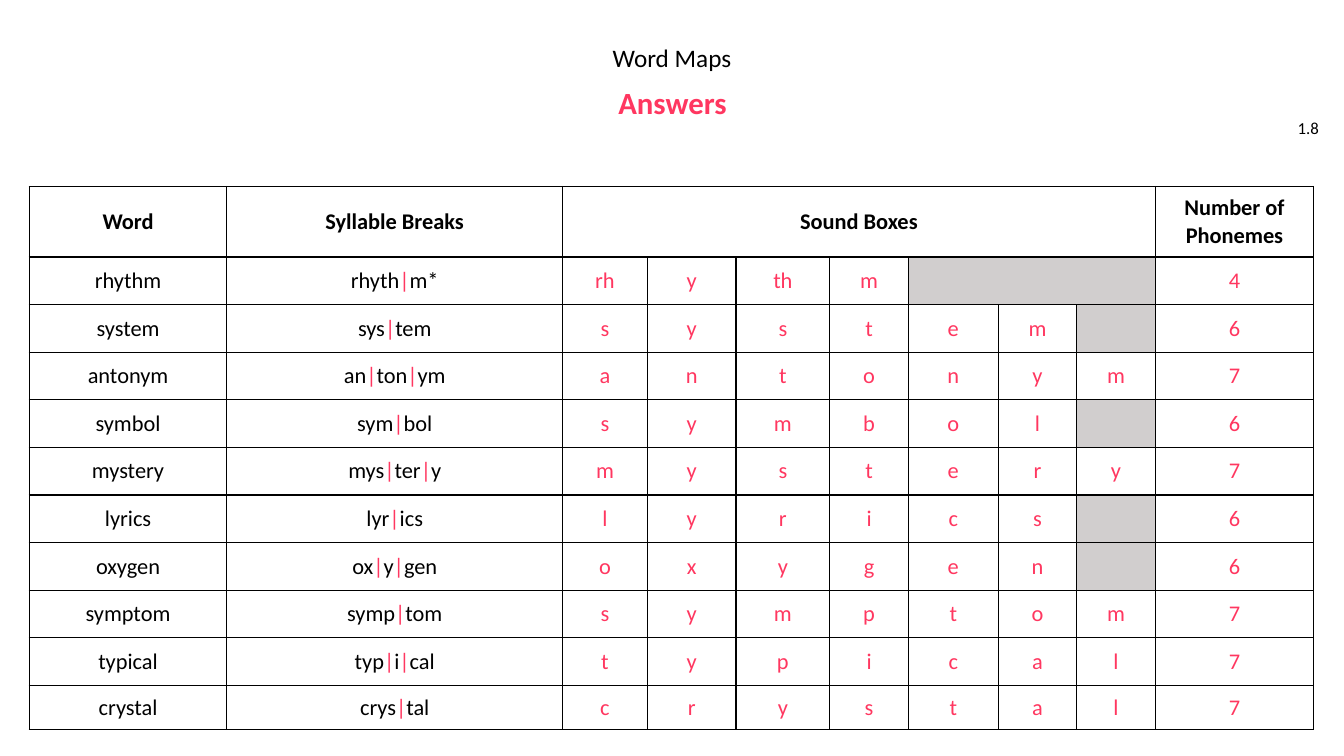
"""Build the Word Maps answer slide."""
from dataclasses import dataclass

from lxml import etree
from pptx import Presentation
from pptx.dml.color import RGBColor
from pptx.enum.text import MSO_ANCHOR, MSO_AUTO_SIZE, PP_ALIGN
from pptx.oxml.ns import qn
from pptx.util import Inches, Pt

MIDDLE, TOP = MSO_ANCHOR.MIDDLE, MSO_ANCHOR.TOP
CENTER, RIGHT = PP_ALIGN.CENTER, PP_ALIGN.RIGHT
NO_FIT = MSO_AUTO_SIZE.NONE


@dataclass(frozen=True)
class Theme:
    font: str = "Calibri"
    ink: str = "000000"
    accent: str = "FF3760"
    paper: str = "FFFFFF"
    blank: str = "D1CECE"
    title: int = 18
    answer: int = 22
    cell: int = 16
    label: int = 12
    border: int = 1


THEME = Theme()
TITLE, ANSWER, LABEL = "Word Maps", "Answers", "1.8"
HEADS = {0: "Word", 1: "Syllable Breaks", 2: "Sound Boxes", 9: "Number of Phonemes"}
WORDS = [
    ("rhyth|m*", "rh y th m"),
    ("sys|tem", "s y s t e m"),
    ("an|ton|ym", "a n t o n y m"),
    ("sym|bol", "s y m b o l"),
    ("mys|ter|y", "m y s t e r y"),
    ("lyr|ics", "l y r i c s"),
    ("ox|y|gen", "o x y g e n"),
    ("symp|tom", "s y m p t o m"),
    ("typ|i|cal", "t y p i c a l"),
    ("crys|tal", "c r y s t a l"),
]
COLS = [1.96, 3.33, 0.84, 0.88, 0.93, 0.78, 0.89, 0.78, 0.78, 1.57]
FIRST, LAST = 2, 8
HEAD_H, LAST_H, TABLE_H = 0.7, 0.44, 5.39


def style(par, size, color, bold=False, align=CENTER):
    par.alignment = align
    for run in par.runs:
        run.font.name = THEME.font
        run.font.size = Pt(size)
        run.font.bold = bold
        run.font.color.rgb = RGBColor.from_string(color)


def place(shape, box, text, anchor):
    shape.left, shape.top, shape.width, shape.height = map(Inches, box)
    frame = shape.text_frame
    frame.text = text
    frame.word_wrap = True
    frame.auto_size = NO_FIT
    frame.vertical_anchor = anchor
    par = frame.paragraphs[0]
    par.space_before = Pt(0)
    return par


def frame_cell(cell, fill):
    cell.vertical_anchor = MIDDLE
    cell.fill.solid()
    cell.fill.fore_color.rgb = RGBColor.from_string(fill)
    props = cell._tc.get_or_add_tcPr()
    for spot, side in enumerate(("lnL", "lnR", "lnT", "lnB")):
        line = etree.Element(qn(f"a:{side}"), w=str(Pt(THEME.border)))
        paint = etree.SubElement(line, qn("a:solidFill"))
        etree.SubElement(paint, qn("a:srgbClr"), val=THEME.ink)
        props.insert(spot, line)


def write(cell, text, color, bold=False):
    par = cell.text_frame.paragraphs[0]
    par.text = text
    style(par, THEME.cell, color, bold)


def write_breaks(cell, breaks):
    par = cell.text_frame.paragraphs[0]
    for part in breaks.replace("|", "\n|\n").split("\n"):
        par.add_run().text = part
    style(par, THEME.cell, THEME.ink)
    for run in par.runs:
        if run.text == "|":
            run.font.color.rgb = RGBColor.from_string(THEME.accent)


def add_words(slide):
    count = len(WORDS) + 1
    shape = slide.shapes.add_table(
        count, len(COLS), Inches(0.29), Inches(1.85),
        Inches(sum(COLS)), Inches(TABLE_H))
    table = shape.table
    table.first_row = table.horz_banding = False
    for col, width in zip(table.columns, COLS):
        col.width = Inches(width)
    row_h = (TABLE_H - HEAD_H - LAST_H) / (count - 2)
    heights = [HEAD_H] + [row_h] * (count - 2) + [LAST_H]
    for row, height in zip(table.rows, heights):
        row.height = Inches(height)
    for cell in table.iter_cells():
        frame_cell(cell, THEME.paper)

    for col, head in HEADS.items():
        write(table.cell(0, col), head, THEME.ink, True)
    table.cell(0, FIRST).merge(table.cell(0, LAST))

    for row, (breaks, letters) in enumerate(WORDS, 1):
        sounds = letters.split()
        word = breaks.replace("|", "").rstrip("*")
        write(table.cell(row, 0), word, THEME.ink)
        write_breaks(table.cell(row, 1), breaks)
        for col, sound in enumerate(sounds, FIRST):
            write(table.cell(row, col), sound, THEME.accent)
        write(table.cell(row, LAST + 1), str(len(sounds)), THEME.accent)
        spare = FIRST + len(sounds)
        for col in range(spare, LAST + 1):
            fill = table.cell(row, col).fill
            fill.fore_color.rgb = RGBColor.from_string(THEME.blank)
        if spare < LAST:
            table.cell(row, spare).merge(table.cell(row, LAST))


def main():
    deck = Presentation()
    deck.slide_width, deck.slide_height = Inches(13.33), Inches(7.5)
    slide = deck.slides.add_slide(deck.slide_layouts[1])

    par = place(slide.shapes.title, (3.82, 0.37, 5.69, 0.35), TITLE, TOP)
    style(par, THEME.title, THEME.ink)

    par = place(slide.placeholders[1], (2.09, 0.84, 9.16, 0.4), ANSWER, MIDDLE)
    par.line_spacing = 0.9
    props = par._p.get_or_add_pPr()
    props.set("marL", "0")
    props.set("indent", "0")
    etree.SubElement(props, qn("a:buNone"))
    style(par, THEME.answer, THEME.accent, True)

    box = (12.55, 1.07, 0.63, 0.4)
    label = slide.shapes.add_textbox(*map(Inches, box))
    par = place(label, box, LABEL, MIDDLE)
    style(par, THEME.label, THEME.ink, align=RIGHT)

    add_words(slide)
    deck.save("out.pptx")


if __name__ == "__main__":
    main()
